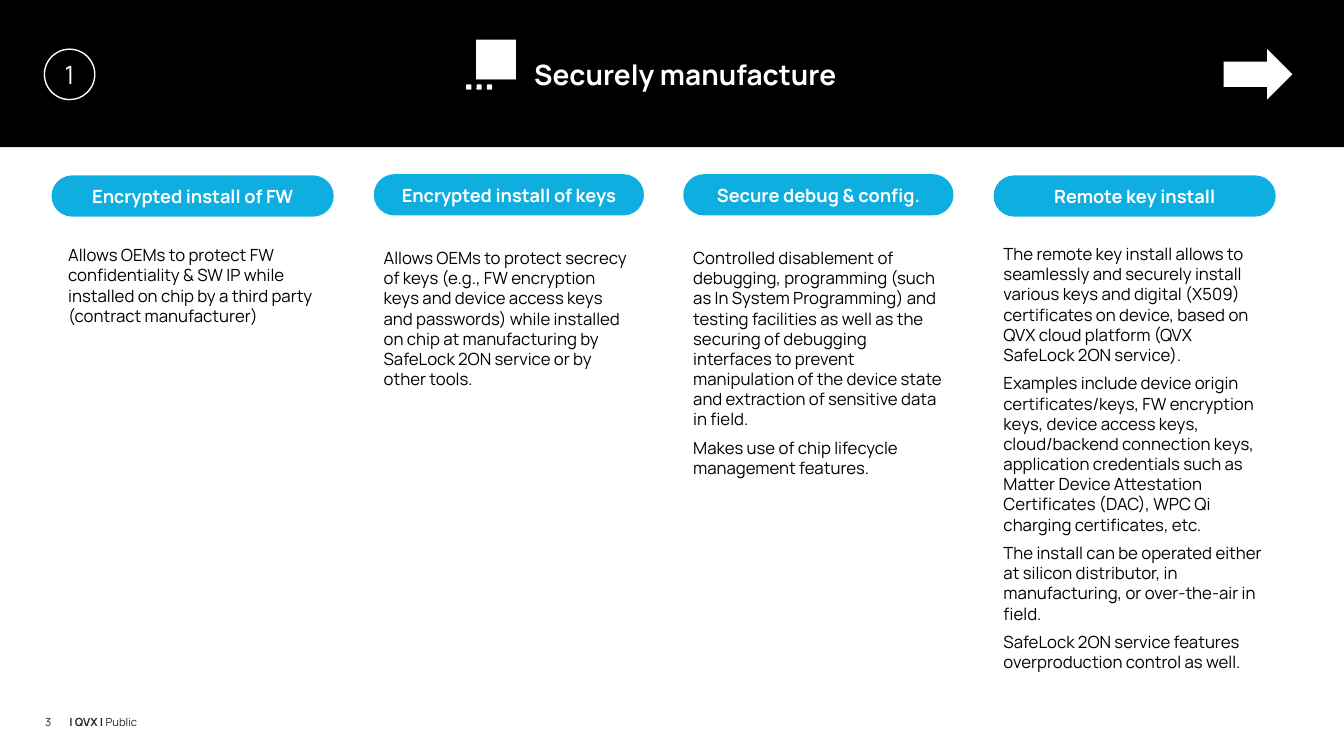
from math import cos, radians, sin

from pptx import Presentation
from pptx.dml.color import RGBColor
from pptx.enum.shapes import MSO_SHAPE as Preset
from pptx.enum.text import MSO_ANCHOR as Anchor, MSO_AUTO_SIZE as AutoSize, PP_ALIGN as Align
from pptx.util import Cm, Pt

BLACK, WHITE, BLUE, GREY = "000000", "FFFFFF", "0EAFE0", "262626"


def paint(fill, colour):
    fill.solid()
    fill.fore_color.rgb = RGBColor.from_string(colour)


def write(shape, paragraphs, size, colour, bold=False, frame_format={}, paragraph_format={}):
    frame = shape.text_frame
    settings = {"word_wrap": True, "auto_size": AutoSize.NONE, "vertical_anchor": Anchor.TOP}
    for name, value in (settings | frame_format).items():
        setattr(frame, name, value)
    for index, text in enumerate(paragraphs):
        paragraph = frame.add_paragraph() if index else frame.paragraphs[0]
        if index:
            paragraph.space_before = Pt(6)
        for name, value in paragraph_format.items():
            setattr(paragraph, name, value)
        for part, part_bold in [(text, bold)] if isinstance(text, str) else text:
            run = paragraph.add_run()
            run.text = part
            for name, value in {"name": "Manrope", "size": Pt(size), "bold": part_bold}.items():
                setattr(run.font, name, value)
            paint(run.font.fill, colour)


presentation = Presentation()
presentation.slide_width, presentation.slide_height = Cm(33.87), Cm(19.05)
slide = presentation.slides.add_slide(presentation.slide_layouts[5])
shapes = slide.shapes

no_insets = dict.fromkeys(["margin_left", "margin_top", "margin_right", "margin_bottom"], 0)
centred_frame = no_insets | {"vertical_anchor": Anchor.MIDDLE}
centred = {"alignment": Align.CENTER}

title = shapes.title
title_place = {"left": 13.46, "top": 1.45, "width": 10.57, "height": 0.86}
for name, value in title_place.items():
    setattr(title, name, Cm(value))
write(title, ["Securely manufacture"], 20, WHITE, True, centred_frame, {"alignment": Align.LEFT})

band = shapes.add_shape(Preset.RECTANGLE, 0, 0, presentation.slide_width, Cm(3.71))
title.element.addprevious(band.element)
arrow = shapes.add_shape(Preset.RIGHT_ARROW, Cm(30.84), Cm(1.24), Cm(1.73), Cm(1.27))
solid_shapes = [(band, BLACK), (arrow, WHITE)]

for column in range(3):
    window = shapes.add_shape(
        Preset.ROUNDED_RECTANGLE, Cm(11.75 + 0.26 * column), Cm(2.13), Cm(0.13), Cm(0.13))
    solid_shapes.append((window, WHITE))

factory_walls = [
    [(11.53, 1.5), (11.81, 1.5), (11.81, 1.93), (12.19, 1.75), (12.19, 1.93),
     (12.6, 1.75), (12.6, 2.41), (11.53, 2.41)],
    [(11.63, 1.57), (11.73, 1.57), (11.73, 2.03), (12.12, 1.85), (12.12, 2.03),
     (12.5, 1.85), (12.5, 2.34), (11.63, 2.34)],
]
outlines = [factory_walls]
for centre_y, outer, inner in [(1.78, 0.48, 0.39), (1.73, 0.3, 0.21)]:
    angles = [radians(degrees) for degrees in range(-105, -20, 5)]
    wave = [(12.17 + outer * cos(angle), centre_y + outer * sin(angle)) for angle in angles]
    wave += [(12.17 + inner * cos(angle), centre_y + inner * sin(angle)) for angle in angles[::-1]]
    outlines.append([wave])

for contours in outlines:
    builder = shapes.build_freeform(*contours[0][0], scale=Cm(1))
    for index, contour in enumerate(contours):
        if index:
            builder.move_to(*contour[0])
        builder.add_line_segments(contour[1:], close=True)
    solid_shapes.append((builder.convert_to_shape(), WHITE))

columns = [
    ("Encrypted install of FW", (1.3, 4.42, 7.11), (1.47, 6.05, 6.93, 2.82), [
        "Allows OEMs to protect FW confidentiality & SW IP while installed on chip by a third "
        "party (contract manufacturer)"]),
    ("Encrypted install of keys", (9.42, 4.39, 6.81), (9.42, 6.12, 6.81, 3.84), [
        "Allows OEMs to protect secrecy of keys (e.g., FW encryption keys and device access keys "
        "and passwords) while installed on chip at manufacturing by SafeLock 2ON service or by "
        "other tools."]),
    ("Secure debug & config.", (17.22, 4.39, 6.81), (17.22, 6.12, 6.81, 6.63), [
        "Controlled disablement of debugging, programming (such as In System Programming) and "
        "testing facilities as well as the securing of debugging interfaces to prevent "
        "manipulation of the device state and extraction of sensitive data in field.",
        "Makes use of chip lifecycle management features."]),
    ("Remote key install", (25.04, 4.42, 7.11), (25.04, 6.02, 7.11, 11.66), [
        "The remote key install allows to seamlessly and securely install various keys and "
        "digital (X509) certificates on device, based on QVX cloud platform (QVX SafeLock 2ON "
        "service).",
        "Examples include device origin certificates/keys, FW encryption keys, device access "
        "keys, cloud/backend connection keys, application credentials such as Matter Device "
        "Attestation Certificates (DAC), WPC Qi charging certificates, etc.",
        "The install can be operated either at silicon distributor, in manufacturing, or "
        "over-the-air in field.",
        "SafeLock 2ON service features overproduction control as well."]),
]
for heading, heading_place, body_place, paragraphs in columns:
    pill = shapes.add_shape(Preset.ROUNDED_RECTANGLE, *map(Cm, heading_place), Cm(1.04))
    pill.adjustments[0] = 0.5
    solid_shapes.append((pill, BLUE))
    write(pill, [heading], 13, WHITE, True, centred_frame, centred)
    write(shapes.add_textbox(*map(Cm, body_place)), paragraphs, 12, BLACK)

for shape, colour in solid_shapes:
    shape.shadow.inherit = False
    paint(shape.fill, colour)
    shape.line.fill.background()

step = shapes.add_shape(Preset.OVAL, Cm(1.12), Cm(1.24), Cm(1.27), Cm(1.27))
step.shadow.inherit = False
step.fill.background()
paint(step.line.fill, WHITE)
step.line.width = Pt(1)
write(step, ["1"], 18, WHITE, False, centred_frame, centred)

footers = [(1.14, 0.46, "3"), (1.75, 11.28, [("| QVX | ", True), ("Public", False)])]
for left, width, text in footers:
    footer = shapes.add_textbox(Cm(left), Cm(17.78), Cm(width), Cm(0.48))
    write(footer, [text], 8, GREY, False, no_insets, {"line_spacing": Pt(16.8)})

presentation.save("out.pptx")
